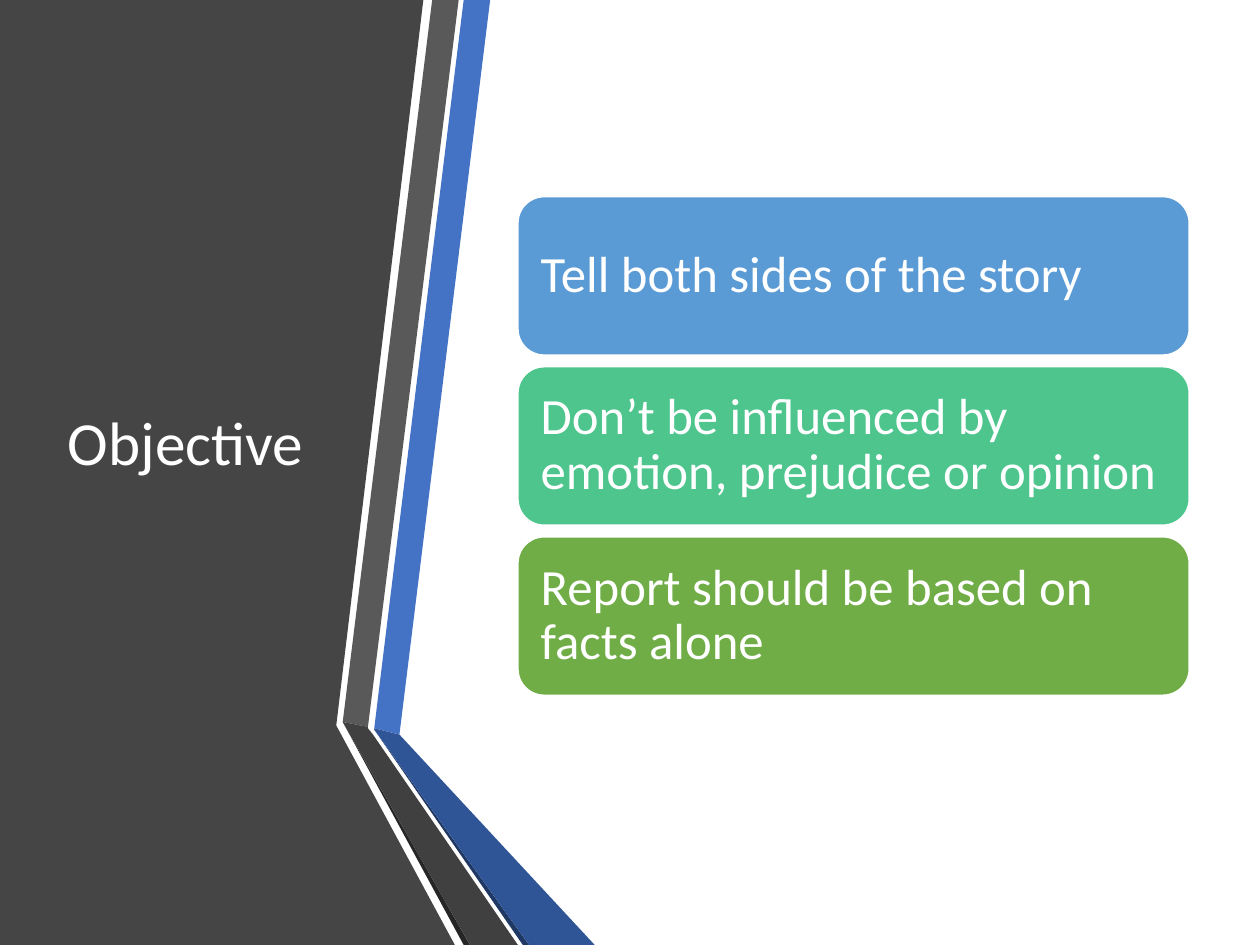
from pptx import Presentation
from pptx.dml.color import RGBColor
from pptx.enum.shapes import MSO_SHAPE
from pptx.enum.text import MSO_ANCHOR, PP_ALIGN
from pptx.util import Pt

PX = 9144
FONT = "Calibri"
HEX = {
    "white": "FFFFFF", "panel": "454545", "blue": "4472C4", "gray": "595959",
    "black": "262626", "navy": "203864", "deep": "2F5597", "dark": "404040",
    "sky": "5B9BD5", "mint": "4DC58D", "green": "70AD47",
}
PANEL = [(264, 0), (336, 0), (267, 575), (267, 576), (361, 750), (0, 750), (0, 0)]
BANDS = [
    ("blue", [(25, 578), (45, 583), (117, 0), (96, 0)]),
    ("gray", [(92, 0), (71, 0), (0, 573), (20, 577)]),
    ("black", [(0, 573), (96, 750), (101, 750)]),
    ("navy", [(25, 579), (143, 750), (148, 750)]),
    ("deep", [(25, 579), (148, 750), (200, 750), (45, 583), (25, 578)]),
    ("dark", [(139, 750), (24, 583), (20, 578), (20, 577), (0, 573), (101, 750)]),
]
CARDS = [
    ("sky", "Tell both sides of the story"),
    ("mint", "Don’t be influenced by emotion, prejudice or opinion"),
    ("green", "Report should be based on facts alone"),
]


def color(name):
    """Return the named colour."""
    return RGBColor.from_string(HEX[name])


def outline(slide, box, points, fill):
    """Draw a closed polygon from points relative to the box."""
    left, top = box[:2]
    spots = [(left + x, top + y) for x, y in points]
    form = slide.shapes.build_freeform(*spots[0], scale=PX)
    form.add_line_segments(spots[1:], close=True)
    shape = form.convert_to_shape()
    shape.shadow.inherit = False
    shape.fill.solid()
    shape.fill.fore_color.rgb = color(fill)
    shape.line.fill.background()


def write(shape, text, size, inset):
    """Set one left-aligned white paragraph, centred vertically."""
    frame = shape.text_frame
    frame.word_wrap = True
    frame.vertical_anchor = MSO_ANCHOR.MIDDLE
    frame.margin_left = frame.margin_right = inset * PX
    frame.margin_top = frame.margin_bottom = inset * PX
    para = frame.paragraphs[0]
    para.text = text
    para.alignment = PP_ALIGN.LEFT
    para.line_spacing = 0.9
    para.font.size = Pt(size)
    para.font.name = FONT
    para.font.color.rgb = color("white")


def panel(slide, box):
    """Draw the dark side panel."""
    outline(slide, box, PANEL, "panel")


def bands(slide, box):
    """Draw the folded ribbons beside the panel."""
    for fill, points in BANDS:
        outline(slide, box, points, fill)


def title(slide, box, text):
    """Place the slide title."""
    shape = slide.shapes.add_textbox(*(n * PX for n in box))
    write(shape, text, 35, 10)


def cards(slide, box, items, gap=9):
    """Stack equal rounded cards to fill the box."""
    left, top, width, height = box
    tall = (height - gap * (len(items) - 1)) // len(items)
    for row, (fill, text) in enumerate(items):
        place = (left, top + row * (tall + gap), width, tall)
        shape = slide.shapes.add_shape(
            MSO_SHAPE.ROUNDED_RECTANGLE, *(n * PX for n in place))
        shape.shadow.inherit = False
        shape.fill.solid()
        shape.fill.fore_color.rgb = color(fill)
        shape.line.color.rgb = color("white")
        shape.line.width = Pt(1)
        write(shape, text, 29, 12)


def main():
    """Build and save the slide."""
    deck = Presentation()
    deck.slide_width, deck.slide_height = 1000 * PX, 750 * PX
    slide = deck.slides.add_slide(deck.slide_layouts[6])
    panel(slide, (0, 0, 361, 750))
    bands(slide, (272, 0, 200, 750))
    title(slide, (44, 75, 228, 558), "Objective")
    cards(slide, (411, 156, 533, 396), CARDS)
    deck.save("out.pptx")


if __name__ == "__main__":
    main()
